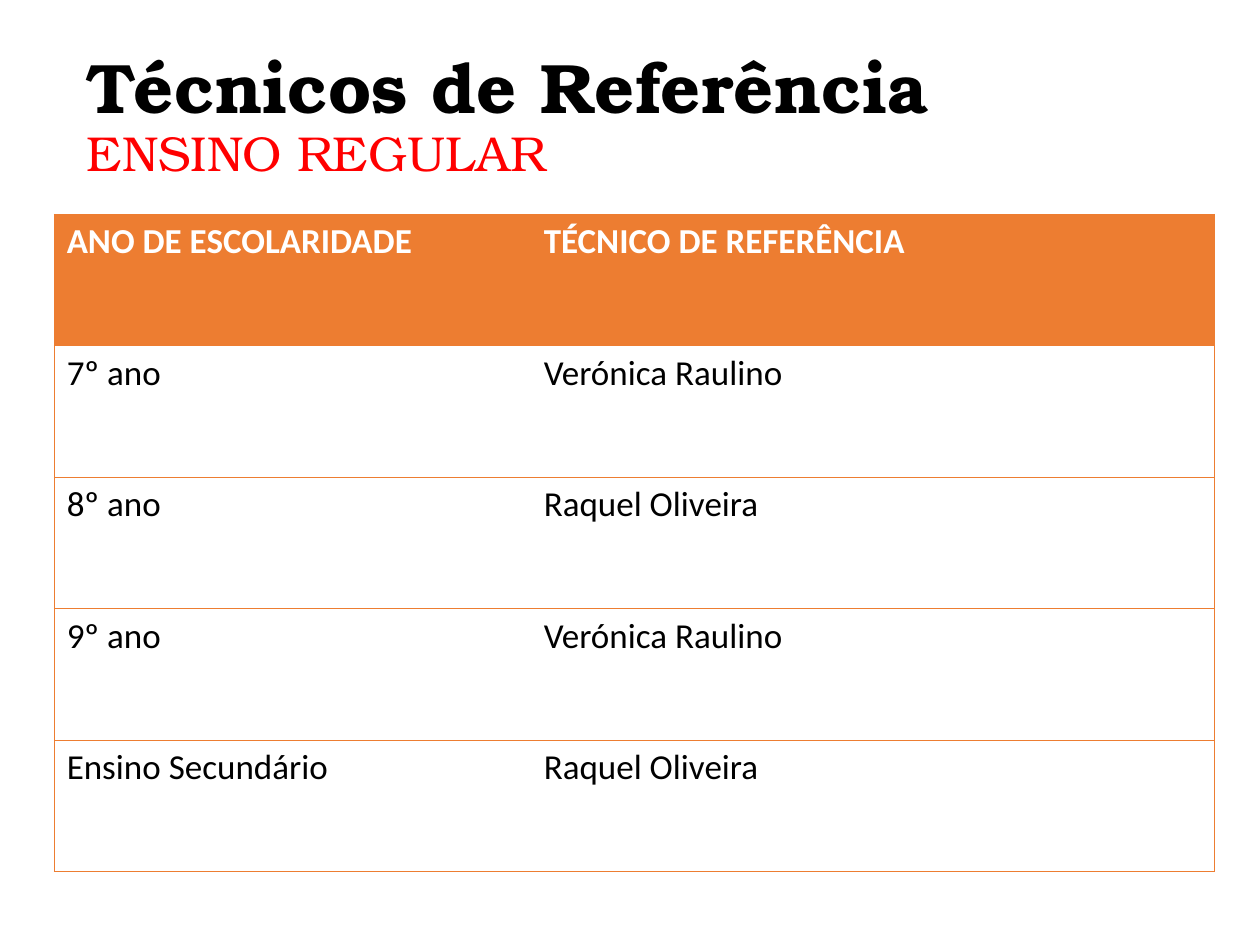
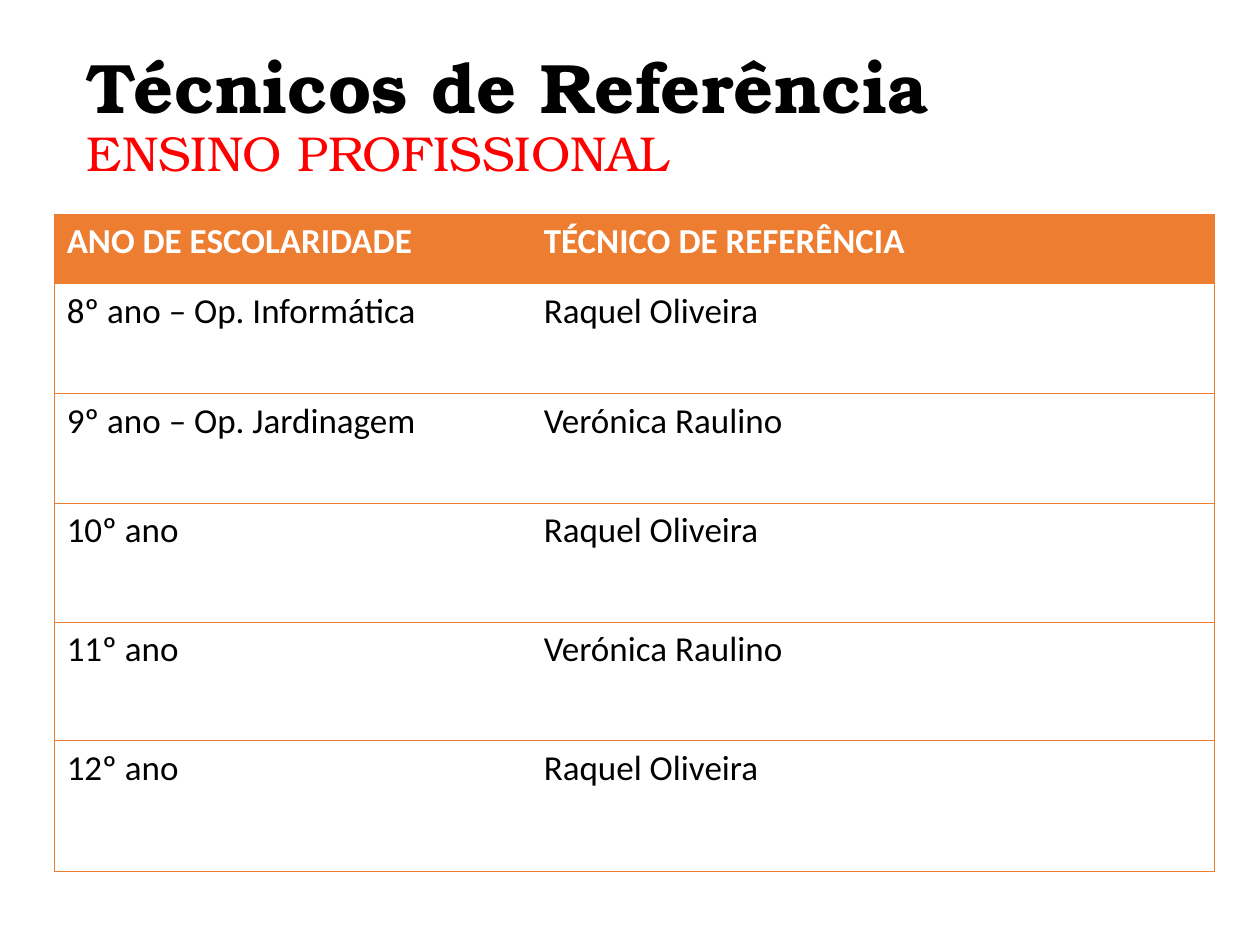
"""Build two slides that list the reference technicians by school year."""
from dataclasses import dataclass

from lxml.etree import SubElement
from pptx import Presentation
from pptx.dml.color import RGBColor
from pptx.enum.text import MSO_ANCHOR
from pptx.oxml.ns import qn
from pptx.util import Inches, Pt

SLIDE_WIDTH, SLIDE_HEIGHT = Inches(10), Inches(7.5)
BLACK, WHITE, RED, ORANGE = "000000", "FFFFFF", "FF0000", "ED7D31"
TITLE_FONT, TABLE_FONT = "TeX Gyre Bonum", "Calibri"
TITLE = "Técnicos de Referência"
HEADER = ("ANO DE ESCOLARIDADE", "TÉCNICO DE REFERÊNCIA")
VERONICA, RAQUEL = "Verónica Raulino", "Raquel Oliveira"
COLUMN_WEIGHTS = (3.79, 5.43)
BORDER_WIDTH = Pt(0.5)
NO_GRID_STYLE = "{2D5ABB26-0587-4C30-8999-92F81FD0307C}"


@dataclass(frozen=True)
class Area:
    """A rectangle given in inches on a 10 by 7.5 slide."""
    left: float
    top: float
    width: float
    height: float

    def box(self) -> tuple[int, ...]:
        """Return the rectangle as lengths taken from the slide's size."""
        return (int(SLIDE_WIDTH * self.left / 10), int(SLIDE_HEIGHT * self.top / 7.5),
                int(SLIDE_WIDTH * self.width / 10), int(SLIDE_HEIGHT * self.height / 7.5))


@dataclass(frozen=True)
class TextStyle:
    """The look of one run of text."""
    font: str
    size: int
    color: str
    bold: bool = False


@dataclass(frozen=True)
class Programme:
    """One slide: a kind of teaching, its technicians and its row weights."""
    name: str
    technicians: tuple[tuple[str, str], ...]
    row_weights: tuple[float, ...]


TITLE_AREA = Area(0.59, 0.21, 8.62, 1.45)
TABLE_AREA = Area(0.43, 1.7, 9.21, 5.22)
TITLE_STYLE = TextStyle(TITLE_FONT, 40, BLACK, True)
SUBTITLE_STYLE = TextStyle(TITLE_FONT, 28, RED)
HEADER_STYLE = TextStyle(TABLE_FONT, 20, WHITE, True)
BODY_STYLE = TextStyle(TABLE_FONT, 20, BLACK)

PROGRAMMES = (
    Programme("ENSINO REGULAR", (
        ("7º ano", VERONICA),
        ("8º ano", RAQUEL),
        ("9º ano", VERONICA),
        ("Ensino Secundário", RAQUEL),
    ), (1,) * 5),
    Programme("ENSINO PROFISSIONAL", (
        ("8º ano – Op. Informática", RAQUEL),
        ("9º ano – Op. Jardinagem", VERONICA),
        ("10º ano", RAQUEL),
        ("11º ano", VERONICA),
        ("12º ano", RAQUEL),
    ), (0.55, 0.87, 0.87, 0.94, 0.94, 1.04)),
)


def rgb(color: str) -> RGBColor:
    """Turn a hex string into a colour."""
    return RGBColor.from_string(color)


def add_run(paragraph, text: str, style: TextStyle) -> None:
    """Add one styled run to a paragraph."""
    run = paragraph.add_run()
    run.text = text
    run.font.name = style.font
    run.font.size = Pt(style.size)
    run.font.bold = style.bold
    run.font.color.rgb = rgb(style.color)


def add_title(slide, subtitle: str) -> None:
    """Add the shared title with the programme's name below it."""
    frame = slide.shapes.add_textbox(*TITLE_AREA.box()).text_frame
    frame.word_wrap = True
    frame.vertical_anchor = MSO_ANCHOR.MIDDLE
    paragraph = frame.paragraphs[0]
    paragraph.line_spacing = 0.9
    add_run(paragraph, TITLE, TITLE_STYLE)
    paragraph.add_line_break()
    add_run(paragraph, subtitle, SUBTITLE_STYLE)


def add_border(cell, side: str) -> None:
    """Draw one thin orange edge (L, R, T or B) of a cell."""
    properties = cell._tc.get_or_add_tcPr()
    line = SubElement(properties, qn(f"a:ln{side}"), w=str(BORDER_WIDTH))
    fill = SubElement(line, qn("a:solidFill"))
    SubElement(fill, qn("a:srgbClr"), val=ORANGE)


def share(total: int, weights: tuple[float, ...]) -> list[int]:
    """Split a length in proportion to the weights."""
    return [int(total * weight / sum(weights)) for weight in weights]


def add_technician_table(slide, programme: Programme) -> None:
    """Add the table of school years and technicians."""
    rows = (HEADER, *programme.technicians)
    left, top, width, height = TABLE_AREA.box()
    frame = slide.shapes.add_table(len(rows), len(HEADER), left, top, width, height)
    table = frame.table
    table._tbl.tblPr.find(qn("a:tableStyleId")).text = NO_GRID_STYLE
    table.horz_banding = False
    for column, column_width in zip(table.columns, share(width, COLUMN_WEIGHTS)):
        column.width = column_width
    for row, row_height in zip(table.rows, share(height, programme.row_weights)):
        row.height = row_height
    for row_index, texts in enumerate(rows):
        is_header = row_index == 0
        for column_index, text in enumerate(texts):
            cell = table.cell(row_index, column_index)
            outer_side = "L" if column_index == 0 else "R"
            for side in (outer_side, "T", "B"):
                add_border(cell, side)
            if is_header:
                cell.fill.solid()
                cell.fill.fore_color.rgb = rgb(ORANGE)
            else:
                cell.fill.background()
            add_run(cell.text_frame.paragraphs[0], text,
                    HEADER_STYLE if is_header else BODY_STYLE)


def main() -> None:
    """Build and save the presentation."""
    presentation = Presentation()
    presentation.slide_width, presentation.slide_height = SLIDE_WIDTH, SLIDE_HEIGHT
    for programme in PROGRAMMES:
        slide = presentation.slides.add_slide(presentation.slide_layouts[6])
        add_title(slide, programme.name)
        add_technician_table(slide, programme)
    presentation.save("out.pptx")


if __name__ == "__main__":
    main()
